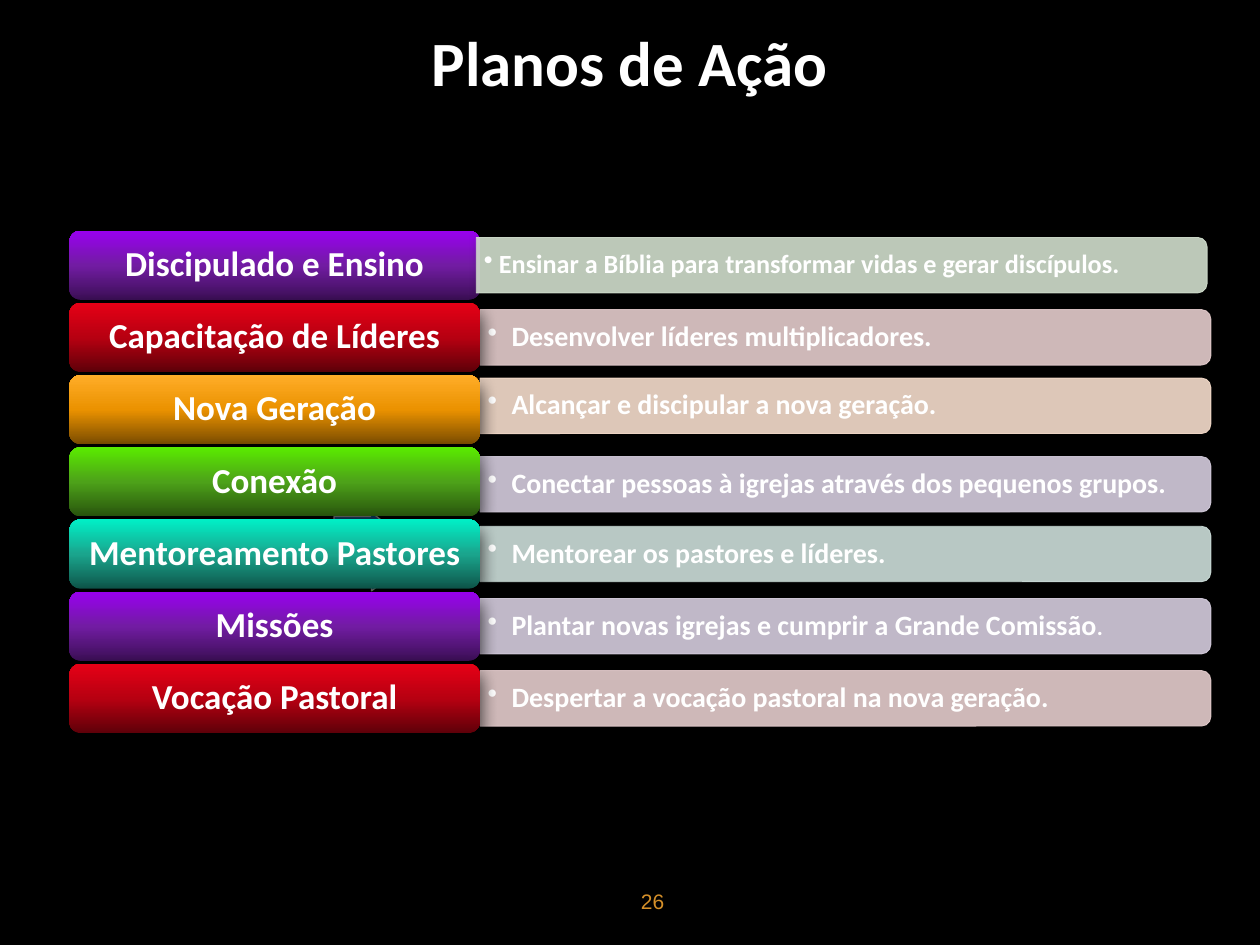
from copy import deepcopy

from lxml import etree
from pptx import Presentation
from pptx import util as u
from pptx.dml.color import RGBColor
from pptx.enum import shapes, text
from pptx.oxml import ns

BLACK = RGBColor(0x00, 0x00, 0x00)
WHITE = RGBColor(0xFF, 0xFF, 0xFF)
AMBER = RGBColor(0xD4, 0x8F, 0x29)
ARROW_BLUE = RGBColor(0x1D, 0x86, 0xCD)
PALE_GREEN = RGBColor(0xD1, 0xDE, 0xCD)
PALE_ROSE = RGBColor(0xE5, 0xCC, 0xCD)
PALE_PEACH = RGBColor(0xF6, 0xDD, 0xCC)
PALE_LILAC = RGBColor(0xD5, 0xCD, 0xDE)
PALE_TEAL = RGBColor(0xCD, 0xDE, 0xDA)
VIOLET = [RGBColor(0x3B, 0x0F, 0x55), RGBColor(0x72, 0x1C, 0xA3), RGBColor(0x99, 0x00, 0xF0)]
RED = [RGBColor(0x5F, 0x00, 0x09), RGBColor(0xB7, 0x00, 0x11), RGBColor(0xE6, 0x00, 0x16)]
ORANGE = [RGBColor(0x7A, 0x4C, 0x00), RGBColor(0xEB, 0x92, 0x00), RGBColor(0xFF, 0xAD, 0x28)]
GREEN = [RGBColor(0x28, 0x54, 0x0D), RGBColor(0x4D, 0xA2, 0x19), RGBColor(0x5A, 0xEB, 0x00)]
TEAL = [RGBColor(0x0E, 0x56, 0x4A), RGBColor(0x1A, 0xA5, 0x8D), RGBColor(0x00, 0xF0, 0xC7)]

LABEL_LEFT, LABEL_WIDTH, LABEL_HEIGHT = 0.55, 3.26, 0.55
BAR_LEFT, BAR_WIDTH, BAR_HEIGHT = 3.81, 5.8, 0.44
TEXT_WIDTH, TEXT_HEIGHT = 5.78, 0.39
FIRST_CENTER, ROW_PITCH = 2.105, 0.573

PLANS = [
    ("Discipulado e Ensino", VIOLET, PALE_GREEN,
     [("Ensinar a Bíblia para transformar vidas e gerar discípulos.", 15)]),
    ("Capacitação de Líderes", RED, PALE_ROSE, [("Desenvolver líderes multiplicadores.", 16)]),
    ("Nova Geração", ORANGE, PALE_PEACH, [("Alcançar e discipular a nova geração.", 16)]),
    ("Conexão", GREEN, PALE_LILAC,
     [("Conectar pessoas à igrejas através dos pequenos grupos.", 16)]),
    ("Mentoreamento Pastores", TEAL, PALE_TEAL, [("Mentorear os pastores e líderes.", 16)]),
    ("Missões", VIOLET, PALE_LILAC,
     [("Plantar novas igrejas e cumprir a Grande Comissão", 16), (".", 13)]),
    ("Vocação Pastoral", RED, PALE_ROSE,
     [("Despertar a vocação pastoral na nova geração.", 16)]),
]
BAR_STACK = [3, 1, 2, 0, 4, 5, 6]
BAR_NUDGE = {0: (-0.03, 0), 2: (0, -0.03), 3: (0, 0.02)}
INDENTS = {0: 0.12}


def apply(target, **values):
    for name, value in values.items():
        setattr(target, name, value)


def box(left, top, width, height):
    return [u.Inches(value) for value in (left, top, width, height)]


def row_center(row):
    return FIRST_CENTER + row * ROW_PITCH


def add_run(paragraph, words, size, **values):
    run = paragraph.add_run()
    run.text = words
    run.font.color.rgb = values.pop("color", WHITE)
    apply(run.font, **{"name": "Calibri", "size": u.Pt(size), "bold": True, **values})


def set_frame(frame, horizontal, vertical):
    apply(frame, word_wrap=True, vertical_anchor=text.MSO_ANCHOR.MIDDLE,
          margin_left=u.Inches(horizontal), margin_right=u.Inches(horizontal),
          margin_top=u.Inches(vertical), margin_bottom=u.Inches(vertical))
    return frame.paragraphs[0]


def set_shadow(shape, alpha, blur, distance, angle):
    shape.shadow.inherit = False
    effects = shape._element.spPr.find(ns.qn("a:effectLst"))
    shadow = etree.SubElement(effects, ns.qn("a:outerShdw"), blurRad=str(u.Pt(blur)),
                              dist=str(u.Pt(distance)), dir=str(angle * 60000), rotWithShape="0")
    color = etree.SubElement(shadow, ns.qn("a:srgbClr"), val=str(BLACK))
    etree.SubElement(color, ns.qn("a:alpha"), val=str(alpha * 1000))


def set_opacity(shape, percent):
    for color in shape._element.spPr.iter(ns.qn("a:srgbClr")):
        etree.SubElement(color, ns.qn("a:alpha"), val=str(percent * 1000))


def set_gradient(shape, colors):
    shape.fill.gradient()
    shape.fill.gradient_angle = 90
    stops = shape._element.spPr.find(".//" + ns.qn("a:gsLst"))
    stops.insert(1, deepcopy(stops[0]))
    for index, (stop, color) in enumerate(zip(shape.fill.gradient_stops, colors)):
        stop.position = index / (len(colors) - 1)
        stop.color.rgb = color


def set_bullet(paragraph, indent):
    properties = paragraph._p.get_or_add_pPr()
    apply_indent = {"marL": indent, "indent": -indent}
    for name, value in apply_indent.items():
        properties.set(name, str(u.Inches(value)))
    etree.SubElement(properties, ns.qn("a:buChar"), char="•")


def add_solid(slide, kind, place, color, line_color, line_width):
    shape = slide.shapes.add_shape(kind, *box(*place))
    shape.fill.solid()
    shape.fill.fore_color.rgb = color
    shape.line.color.rgb = line_color
    shape.line.width = u.Pt(line_width)
    return shape


def add_title(slide, words):
    title = slide.shapes.title
    apply(title, **dict(zip(("left", "top", "width", "height"), box(0.5, 0.05, 9, 0.87))))
    paragraph = set_frame(title.text_frame, 0.1, 0.05)
    paragraph.alignment = text.PP_ALIGN.CENTER
    add_run(paragraph, words, 36)


def add_page_number(slide, number):
    paragraph = set_frame(slide.shapes.add_textbox(*box(4.62, 6.95, 0.75, 0.4)).text_frame, 0.1, 0.05)
    paragraph.alignment = text.PP_ALIGN.RIGHT
    add_run(paragraph, number, 12, name="Arial", bold=False, color=AMBER)


def add_arrow(slide, left, top):
    arrow = add_solid(slide, shapes.MSO_SHAPE.RIGHT_ARROW, (left, top, 0.39, 0.16),
                      ARROW_BLUE, WHITE, 0.75)
    arrow.adjustments[1] = 0.63
    set_shadow(arrow, 40, 4, 3, 270)


def add_bar(slide, row):
    _, _, color, runs = PLANS[row]
    shift, drop = BAR_NUDGE.get(row, (0, 0))
    left, center = BAR_LEFT + shift, row_center(row) + drop
    place = (left + (BAR_WIDTH - BAR_HEIGHT) / 2, center - BAR_WIDTH / 2, BAR_HEIGHT, BAR_WIDTH)
    bar = add_solid(slide, shapes.MSO_SHAPE.ROUND_2_SAME_RECTANGLE, place, color, color, 0.5)
    bar.rotation = 90
    set_opacity(bar, 90)
    set_shadow(bar, 55, 7, 4, 35)
    caption = slide.shapes.add_textbox(*box(left, center - TEXT_HEIGHT / 2, TEXT_WIDTH, TEXT_HEIGHT))
    paragraph = set_frame(caption.text_frame, 0.06, 0.03)
    paragraph.line_spacing = 0.9
    set_bullet(paragraph, INDENTS.get(row, 0.19))
    for words, size in runs:
        add_run(paragraph, words, size)


def add_label(slide, row):
    words, colors, _, _ = PLANS[row]
    label = slide.shapes.add_shape(
        shapes.MSO_SHAPE.ROUNDED_RECTANGLE,
        *box(LABEL_LEFT, row_center(row) - LABEL_HEIGHT / 2, LABEL_WIDTH, LABEL_HEIGHT))
    set_gradient(label, colors)
    label.line.fill.background()
    set_shadow(label, 75, 10, 5, 90)
    paragraph = set_frame(label.text_frame, 0.08, 0.04)
    apply(paragraph, alignment=text.PP_ALIGN.CENTER, line_spacing=0.9)
    add_run(paragraph, words, 20)


def main():
    presentation = Presentation()
    apply(presentation, slide_width=u.Inches(10), slide_height=u.Inches(7.5))
    slide = presentation.slides.add_slide(presentation.slide_layouts[5])
    slide.background.fill.solid()
    slide.background.fill.fore_color.rgb = BLACK
    add_title(slide, "Planos de Ação")
    add_page_number(slide, "26")
    for left, top in ((2.65, 4.06), (2.66, 4.53)):
        add_arrow(slide, left, top)
    for row, bar_row in enumerate(BAR_STACK):
        add_bar(slide, bar_row)
        add_label(slide, row)
    presentation.save("out.pptx")


if __name__ == "__main__":
    main()
